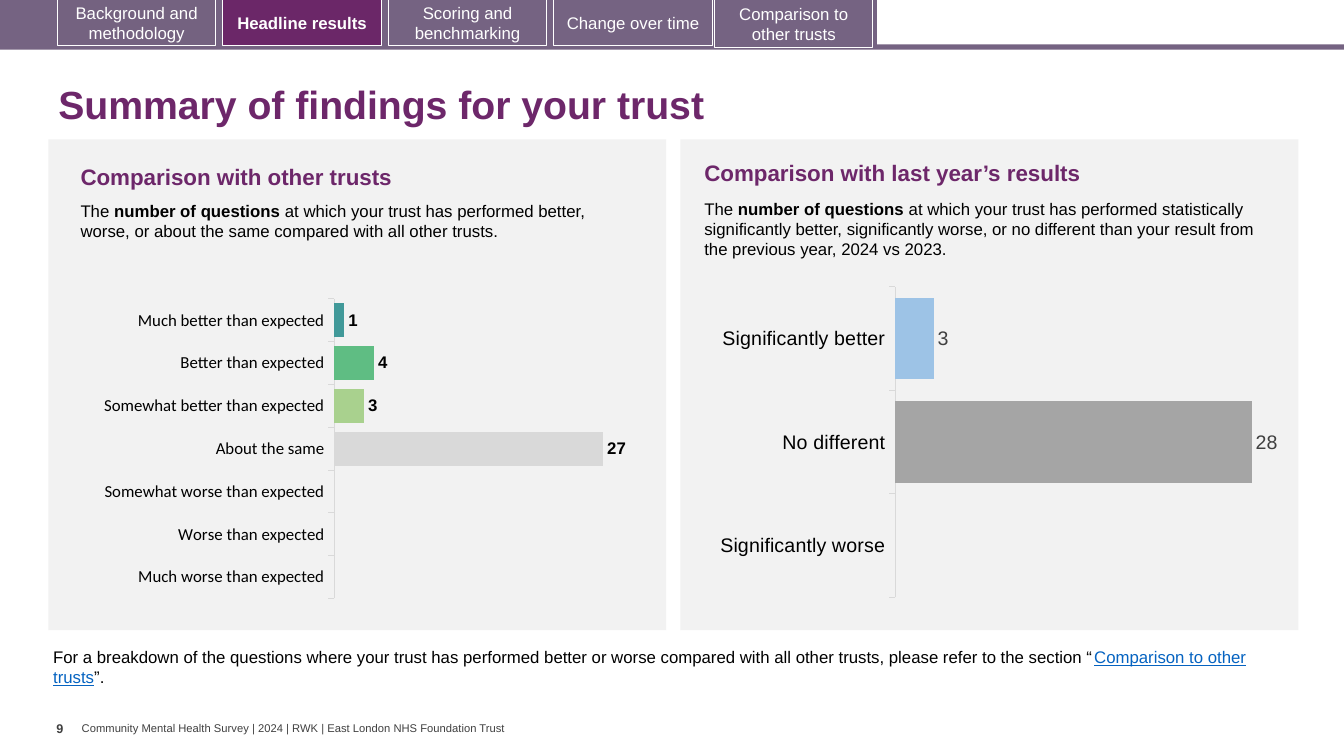
from lxml.etree import SubElement
from pptx import Presentation
from pptx.chart.data import CategoryChartData
from pptx.dml.color import RGBColor
from pptx.enum.chart import XL_CHART_TYPE, XL_LABEL_POSITION, XL_TICK_MARK
from pptx.enum.shapes import MSO_SHAPE
from pptx.enum.text import MSO_ANCHOR, MSO_AUTO_SIZE, PP_ALIGN
from pptx.oxml.ns import qn
from pptx.util import Cm, Pt

HUES = {
    "white": "FFFFFF", "black": "000000", "dark": "404040", "plum": "6D276A",
    "active": "6B2768", "mauve": "756382", "tab": "746280", "panel": "F2F2F2",
    "axis": "D9D9D9", "link": "0563C1", "series": "4472C4",
    "much up": "419999", "up": "5FBD83", "some up": "A9D18E", "same": "D9D9D9",
    "some down": "FFD966", "down": "F1BE48", "much down": "E87722",
    "better": "9DC3E6", "level": "A5A5A5", "worse": "7030A0",
}


def hue(name):
    return RGBColor.from_string(HUES[name])


def style(font, size, color, bold=False, face="Arial"):
    font.name, font.size, font.bold = face, Pt(size), bold
    font.color.rgb = hue(color)


def add_rect(slide, box, fill, line=None):
    rect = slide.shapes.add_shape(MSO_SHAPE.RECTANGLE, *map(Cm, box))
    rect.shadow.inherit = False
    rect.fill.solid()
    rect.fill.fore_color.rgb = hue(fill)
    if line:
        rect.line.color.rgb = hue(line)
        rect.line.width = Pt(0.75)
    else:
        rect.line.fill.background()
    return rect


def add_tab(slide, left, top, label, fill, bold=False):
    tab = add_rect(slide, (left, top, 3.99, 1.19), fill, "white")
    frame = tab.text_frame
    frame.text = label
    frame.word_wrap = True
    frame.vertical_anchor = MSO_ANCHOR.MIDDLE
    para = frame.paragraphs[0]
    para.alignment = PP_ALIGN.CENTER
    style(para.runs[0].font, 12, "white", bold)


def add_text(slide, box, parts, size, color="black", bold=False, wrap=True):
    """Each part is plain text or a pair of text and style: bold or link."""
    frame = slide.shapes.add_textbox(*map(Cm, box)).text_frame
    frame.word_wrap = wrap
    for part in parts:
        text, kind = part if isinstance(part, tuple) else (part, "")
        run = frame.paragraphs[0].add_run()
        run.text = text
        link = kind == "link"
        style(run.font, size, "link" if link else color, bold or kind == "bold")
        if link:
            run.font.underline = True
    return frame


def set_plot(chart, spot):
    """Fix the inner plot area as fractions of the chart."""
    area = chart._chartSpace.find(".//" + qn("c:plotArea"))
    for old in area.findall(qn("c:layout")):
        area.remove(old)
    layout = SubElement(area, qn("c:layout"))
    area.insert(0, layout)
    manual = SubElement(layout, qn("c:manualLayout"))
    pairs = [("layoutTarget", "inner"), ("xMode", "edge"), ("yMode", "edge")]
    pairs += zip("xywh", spot)
    for tag, val in pairs:
        SubElement(manual, qn("c:" + tag)).set("val", str(val))


def add_bars(slide, box, rows, spot, size, face, ink, bold):
    """Each row is a category, its value and its colour."""
    data = CategoryChartData(number_format="0")
    data.categories = [row[0] for row in rows]
    data.add_series("Series 1", [row[1] for row in rows])
    chart = slide.shapes.add_chart(
        XL_CHART_TYPE.BAR_CLUSTERED, *map(Cm, box), data).chart
    chart.has_legend = chart.has_title = False
    style(chart.font, size, "black", face=face)
    set_plot(chart, spot)

    # Axes
    cats, vals = chart.category_axis, chart.value_axis
    cats.reverse_order = True
    cats.has_major_gridlines = vals.has_major_gridlines = False
    cats.major_tick_mark = XL_TICK_MARK.OUTSIDE
    cats.format.line.color.rgb = hue("axis")
    cats.format.line.width = Pt(0.75)
    style(cats.tick_labels.font, size, "black", face=face)
    vals.minimum_scale, vals.maximum_scale = 0, 30
    vals.visible = False

    # Bars and labels
    plot = chart.plots[0]
    plot.gap_width = 27
    plot.vary_by_categories = False
    series = plot.series[0]
    series.format.fill.solid()
    series.format.fill.fore_color.rgb = hue("series")
    for i, row in enumerate(rows):
        fill = series.points[i].format.fill
        fill.solid()
        fill.fore_color.rgb = hue(row[2])
    labels = series.data_labels
    labels.show_value = True
    labels.position = XL_LABEL_POSITION.OUTSIDE_END
    labels.number_format, labels.number_format_is_linked = "0", False
    style(labels.font, size, ink, bold)


def main():
    deck = Presentation()
    deck.slide_width, deck.slide_height = Cm(33.87), Cm(19.05)
    slide = deck.slides.add_slide(deck.slide_layouts[6])

    # Navigation tabs
    add_rect(slide, (0, 1.12, 33.87, 0.13), "mauve")
    add_rect(slide, (0, 0, 22.1, 1.19), "mauve")
    tabs = [("Background and methodology", "tab"), ("Headline results", "active"),
            ("Scoring and benchmarking", "mauve"), ("Change over time", "mauve")]
    for i, (label, fill) in enumerate(tabs):
        add_tab(slide, 1.45 + 4.17 * i, -0.03, label, fill, fill == "active")
    add_tab(slide, 18.01, 0, "Comparison to other trusts", "mauve")

    # Title
    title = add_text(slide, (1.22, 1.78, 31.72, 1.83),
                     ["Summary of findings for your trust"], 28, "plum", True)
    title.vertical_anchor = MSO_ANCHOR.MIDDLE
    title.paragraphs[0].line_spacing = 0.9

    # Panels
    for left in (1.22, 17.15):
        add_rect(slide, (left, 3.51, 15.57, 12.37), "panel")

    # Other trusts
    add_text(slide, (1.78, 3.99, 13.44, 0.94),
             ["Comparison with other trusts"], 16, "plum", True)
    add_text(slide, (1.78, 4.93, 13.44, 1.8),
             ["The ", ("number of questions ", "bold"),
              "at which your trust has performed better, worse, or about the "
              "same compared with all other trusts."], 12)
    add_bars(slide, (1.04, 6.91, 15.82, 8.66), [
        ("Much better than expected", 1, "much up"),
        ("Better than expected", 4, "up"),
        ("Somewhat better than expected", 3, "some up"),
        ("About the same", 27, "same"),
        ("Somewhat worse than expected", None, "some down"),
        ("Worse than expected", None, "down"),
        ("Much worse than expected", None, "much down"),
    ], (0.467, 0.072, 0.476, 0.872), 12, "Calibri", "black", True)

    # Last year
    add_text(slide, (17.5, 3.89, 13.92, 0.94),
             ["Comparison with last year’s results"], 16, "plum", True)
    add_text(slide, (17.5, 4.88, 14.58, 1.8),
             ["The ", ("number of questions ", "bold"),
              "at which your trust has performed statistically significantly "
              "better, significantly worse, or no different than your result "
              "from the previous year, 2024 vs 2023."], 12)
    add_bars(slide, (16.87, 6.93, 15.82, 8.61), [
        ("Significantly better", 3, "better"),
        ("No different", 28, "level"),
        ("Significantly worse", None, "worse"),
    ], (0.36, 0.035, 0.608, 0.909), 14, "Arial", "dark", False)

    # Note
    add_text(slide, (1.09, 16.18, 31.01, 1.27),
             ["For a breakdown of the questions where your trust has performed "
              "better or worse compared with all other trusts, please refer to "
              "the section “", ("Comparison to other trusts", "link"), "”."], 12)

    # Footer
    page = add_text(slide, (1.42, 18.03, 0.64, 1.02), ["9"], 9, "dark", True)
    page.margin_left = page.margin_right = 0
    foot = add_text(slide, (2.06, 18.19, 10.82, 0.33),
                    ["Community Mental Health Survey | 2024 | RWK | "
                     "East London NHS Foundation Trust"], 8, "dark", wrap=False)
    foot.margin_left = foot.margin_right = foot.margin_top = foot.margin_bottom = 0
    foot.vertical_anchor = MSO_ANCHOR.MIDDLE
    foot.auto_size = MSO_AUTO_SIZE.SHAPE_TO_FIT_TEXT

    deck.save("out.pptx")


if __name__ == "__main__":
    main()
